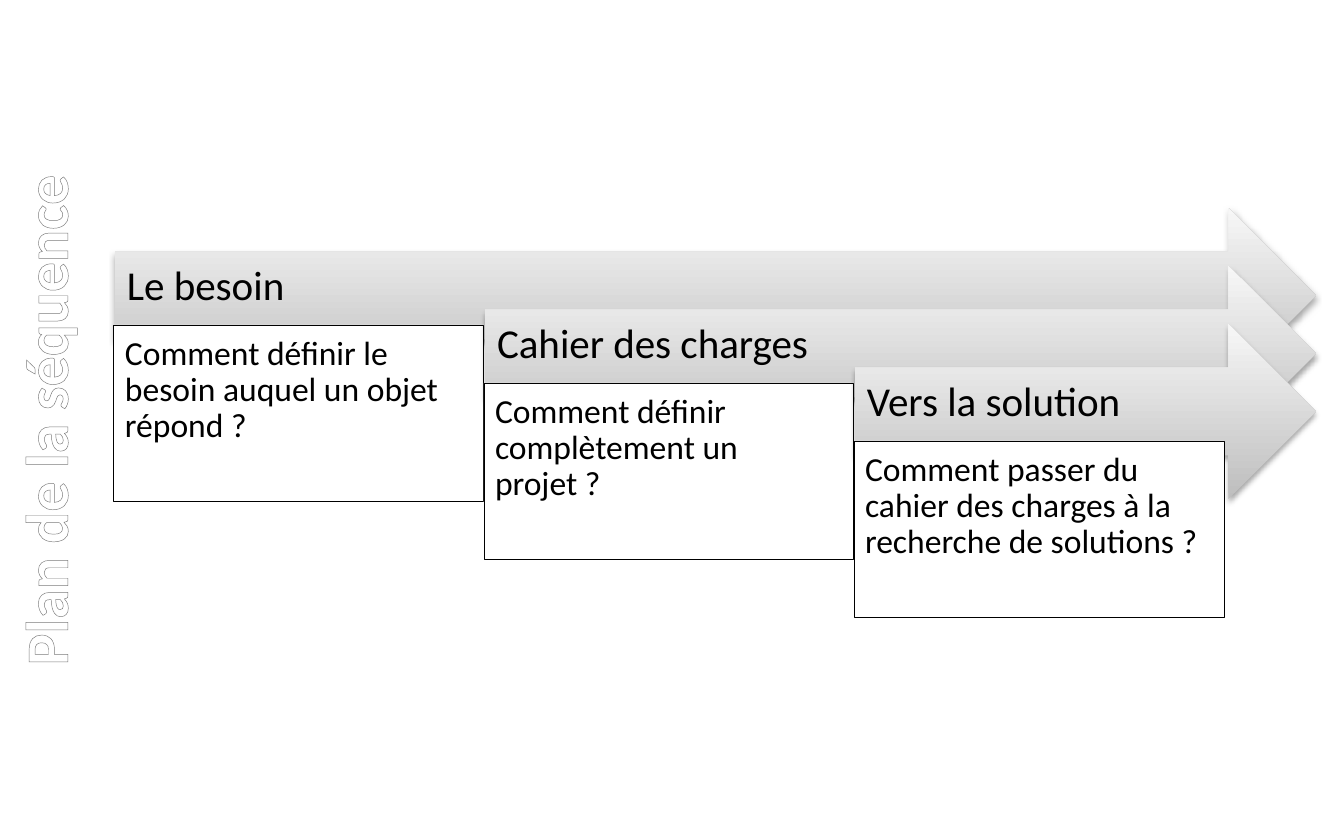
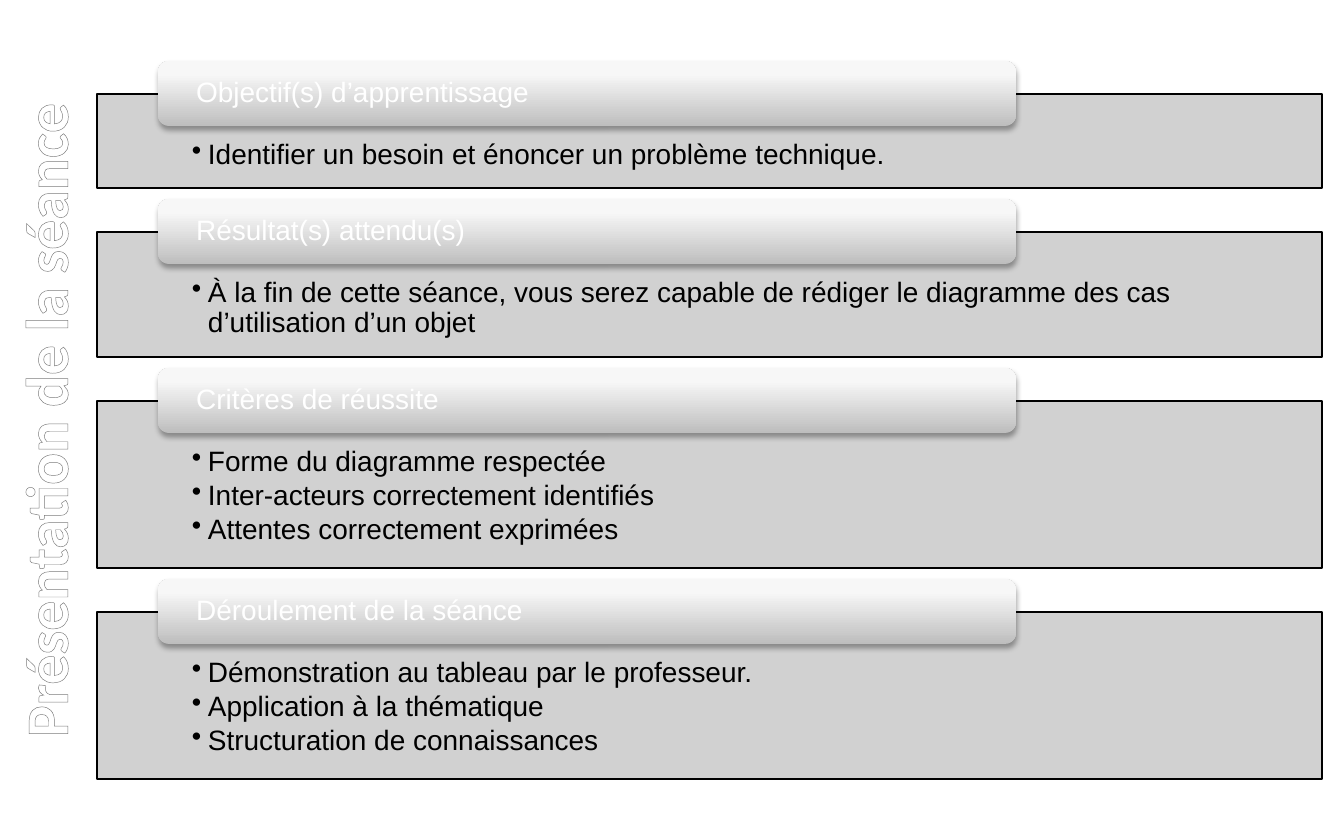
from copy import deepcopy

from lxml import etree
from pptx import Presentation
from pptx import util as u
from pptx.dml.color import RGBColor
from pptx.enum import shapes, text
from pptx.oxml import ns

PX = 914400 / 134.4
WIDTH, HEIGHT = 1344, 840
COLORS = {
    "white": "FFFFFF",
    "ink": "000000",
    "title_edge": "7C7C7C",
    "panel": "CCCCCC",
    "shade": "BEBEBE",
    "light": "F7F7F7",
    "glow": "F8F8F8",
}
ARROW_STOPS = [(0, "shade"), (1, "light")]
TAB_STOPS = [(0, "shade"), (0.8, "light"), (1, "glow")]

STAGES = [
    ("Le besoin", "Comment définir le besoin auquel un objet répond ?"),
    ("Cahier des charges", "Comment définir complètement un projet ?"),
    ("Vers la solution", "Comment passer du cahier des charges à la recherche de solutions ?"),
]
SECTIONS = [
    ("Objectif(s) d’apprentissage", 94,
     ["Identifier un besoin et énoncer un problème technique."]),
    ("Résultat(s) attendu(s)", 125,
     ["À la fin de cette séance, vous serez capable de rédiger le diagramme "
      "des cas d’utilisation d’un objet"]),
    ("Critères de réussite", 167,
     ["Forme du diagramme respectée",
      "Inter-acteurs correctement identifiés",
      "Attentes correctement exprimées"]),
    ("Déroulement de la séance", 167,
     ["Démonstration au tableau par le professeur.",
      "Application à la thématique",
      "Structuration de connaissances"]),
]


def px(length):
    """Turn a length in px into EMU."""
    return u.Emu(round(length * PX))


def rgb(name):
    """Look up a named colour."""
    return RGBColor.from_string(COLORS[name])


def add_xml(parent, tag, **attributes):
    """Append a drawing element with the given attributes."""
    return etree.SubElement(parent, ns.qn(tag), {k: str(v) for k, v in attributes.items()})


def add_block(slide, preset, box):
    """Add a preset shape without shadow at a px box."""
    block = slide.shapes.add_shape(preset, *map(px, box))
    block.shadow.inherit = False
    return block


def fill_flat(block, color, line_width, opacity=100):
    """Give a block a plain fill and a black outline."""
    block.fill.solid()
    block.fill.fore_color.rgb = rgb(color)
    if opacity < 100:
        tint = block._element.spPr.find(ns.qn("a:solidFill"))[0]
        add_xml(tint, "a:alpha", val=opacity * 1000)
    block.line.color.rgb = rgb("ink")
    block.line.width = u.Pt(line_width)


def fill_raised(block, stops):
    """Give a block an upward gradient and a soft shadow below it."""
    block.fill.gradient()
    block.fill.gradient_angle = 90
    properties = block._element.spPr
    stop_list = properties.find(ns.qn("a:gradFill")).find(ns.qn("a:gsLst"))
    for _ in stops[2:]:
        stop_list.append(deepcopy(stop_list[-1]))
    for stop, (position, color) in zip(block.fill.gradient_stops, stops):
        stop.position = position
        stop.color.rgb = rgb(color)
    block.line.fill.background()
    shadow = add_xml(properties.find(ns.qn("a:effectLst")), "a:outerShdw",
                     blurRad=u.Pt(3.1), dist=u.Pt(1.8), dir=5400000, rotWithShape=0)
    add_xml(add_xml(shadow, "a:srgbClr", val=COLORS["ink"]), "a:alpha", val=35000)


def write(block, lines, font, size, color, insets, anchor, after):
    """Write left-aligned paragraphs into a block."""
    frame = block.text_frame
    frame.word_wrap = True
    frame.vertical_anchor = anchor
    frame.margin_left, frame.margin_top, frame.margin_right, frame.margin_bottom = map(px, insets)
    frame.text = "\n".join(lines)
    for paragraph in frame.paragraphs:
        paragraph.alignment = text.PP_ALIGN.LEFT
        paragraph.line_spacing = 0.9
        paragraph.space_after = u.Pt(after)
        style_run(paragraph.runs[0], font, size, color)


def style_run(run, font, size, color):
    """Set the font, size and colour of a run."""
    run.font.name = font
    run.font.size = u.Pt(size)
    run.font.color.rgb = rgb(color)


def add_bullets(frame, indent):
    """Turn every paragraph of a frame into a hanging bullet."""
    for paragraph in frame.paragraphs:
        paragraph.level = 1
        properties = paragraph._p.get_or_add_pPr()
        properties.set("marL", str(px(indent)))
        properties.set("indent", str(-px(indent)))
        add_xml(properties, "a:buChar", char="•")


def add_titled_slide(deck, heading):
    """Add a slide whose outlined title runs up the left edge."""
    slide = deck.slides.add_slide(deck.slide_layouts[5])
    title = slide.shapes.title
    length, thickness, center = HEIGHT, 84, 44
    title.left, title.top = px(center - length / 2), px((HEIGHT - thickness) / 2)
    title.width, title.height = px(length), px(thickness)
    title.rotation = 270
    frame = title.text_frame
    frame.text = heading
    frame.word_wrap = True
    frame.auto_size = text.MSO_AUTO_SIZE.SHAPE_TO_FIT_TEXT
    frame.vertical_anchor = text.MSO_ANCHOR.MIDDLE
    frame.paragraphs[0].alignment = text.PP_ALIGN.CENTER
    run = frame.paragraphs[0].runs[0]
    style_run(run, "Calibri", 32, "white")
    run.font.bold = True
    edge = etree.Element(ns.qn("a:ln"), w=str(u.Pt(0.75)))
    add_xml(add_xml(edge, "a:solidFill"), "a:srgbClr", val=COLORS["title_edge"])
    run._r.get_or_add_rPr().insert(0, edge)
    return slide


def add_stage(slide, box, stage, question):
    """Draw one stage arrow with its question box hanging below the shaft."""
    left, top, width, height = box
    arrow = add_block(slide, shapes.MSO_SHAPE.RIGHT_ARROW, box)
    fill_raised(arrow, ARROW_STOPS)
    write(arrow, [stage], "Calibri", 22, "ink", (12, 12, 38, 28), text.MSO_ANCHOR.MIDDLE, 7.7)
    card = add_block(slide, shapes.MSO_SHAPE.RECTANGLE, (left - 1, top + 117, 370, 177))
    fill_flat(card, "white", 0.5)
    write(card, [question], "Calibri", 18, "ink", (11, 11, 11, 11), text.MSO_ANCHOR.TOP, 6.3)


def add_section(slide, box, label, points):
    """Draw one bulleted panel with its label tab across the top edge."""
    left, top, _, _ = box
    panel = add_block(slide, shapes.MSO_SHAPE.RECTANGLE, box)
    fill_flat(panel, "panel", 0.75, opacity=90)
    write(panel, points, "Arial", 15, "ink", (95, 46, 95, 16), text.MSO_ANCHOR.TOP, 2.25)
    add_bullets(panel.text_frame, 16)
    tab = add_block(slide, shapes.MSO_SHAPE.ROUNDED_RECTANGLE, (left + 61, top - 33, 858, 65))
    fill_raised(tab, TAB_STOPS)
    write(tab, [label], "Arial", 15, "white", (35, 0, 35, 0), text.MSO_ANCHOR.MIDDLE, 5.25)


def build_plan(deck):
    """Build the sequence plan as stepped arrows sharing one right edge."""
    slide = add_titled_slide(deck, "Plan de la séquence")
    right = 1316
    for step, (stage, question) in enumerate(STAGES):
        left, top = 115 + 370 * step, 208 + 58 * step
        add_stage(slide, (left, top, right - left, 175), stage, question)


def build_session(deck):
    """Build the session overview as a stack of labelled panels."""
    slide = add_titled_slide(deck, "Présentation de la séance")
    top, gap = 94, 44
    for label, height, points in SECTIONS:
        add_section(slide, (97, top, 1225, height), label, points)
        top += height + gap


def main():
    """Build and save the deck."""
    deck = Presentation()
    deck.slide_width, deck.slide_height = px(WIDTH), px(HEIGHT)
    build_plan(deck)
    build_session(deck)
    deck.save("out.pptx")


if __name__ == "__main__":
    main()
